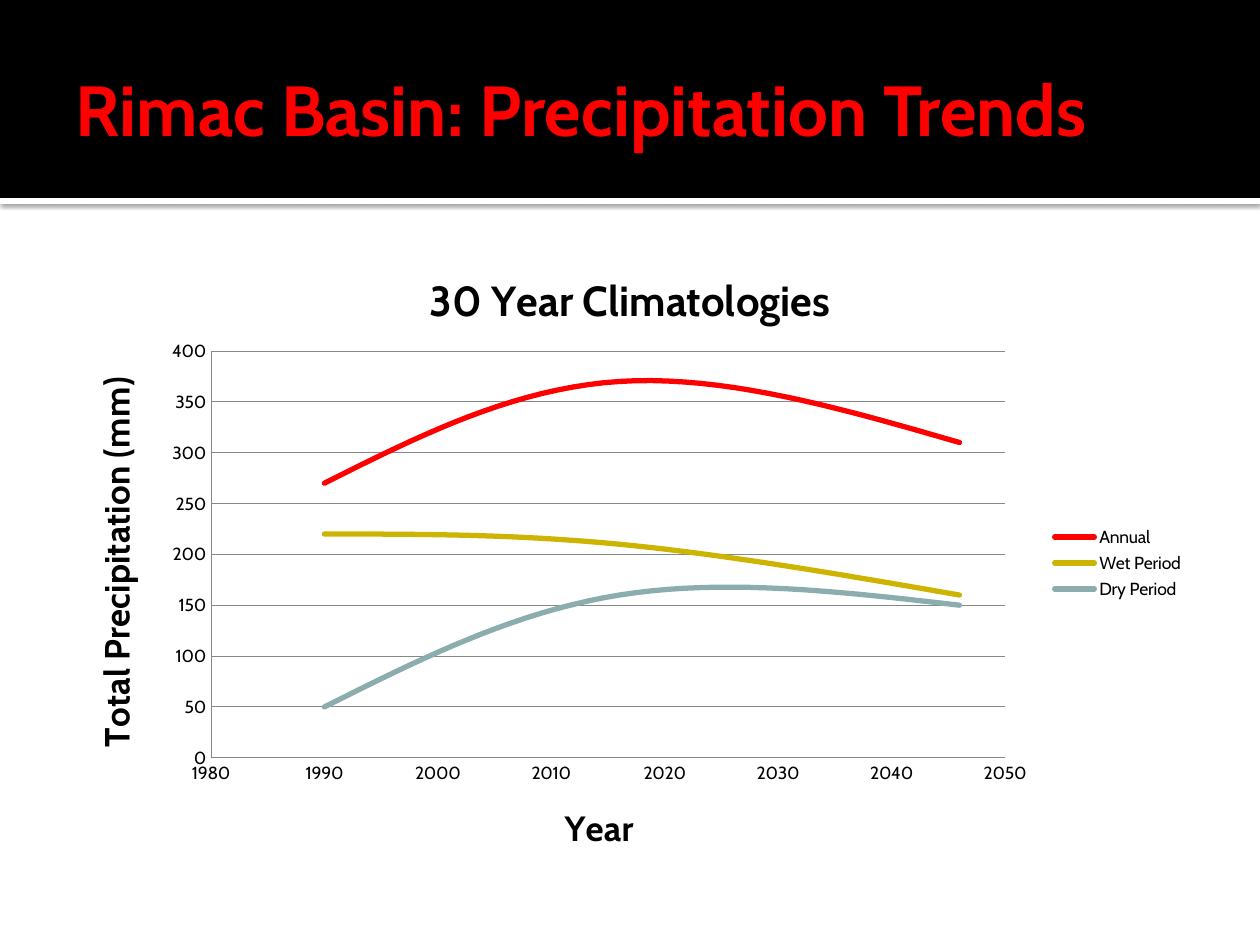
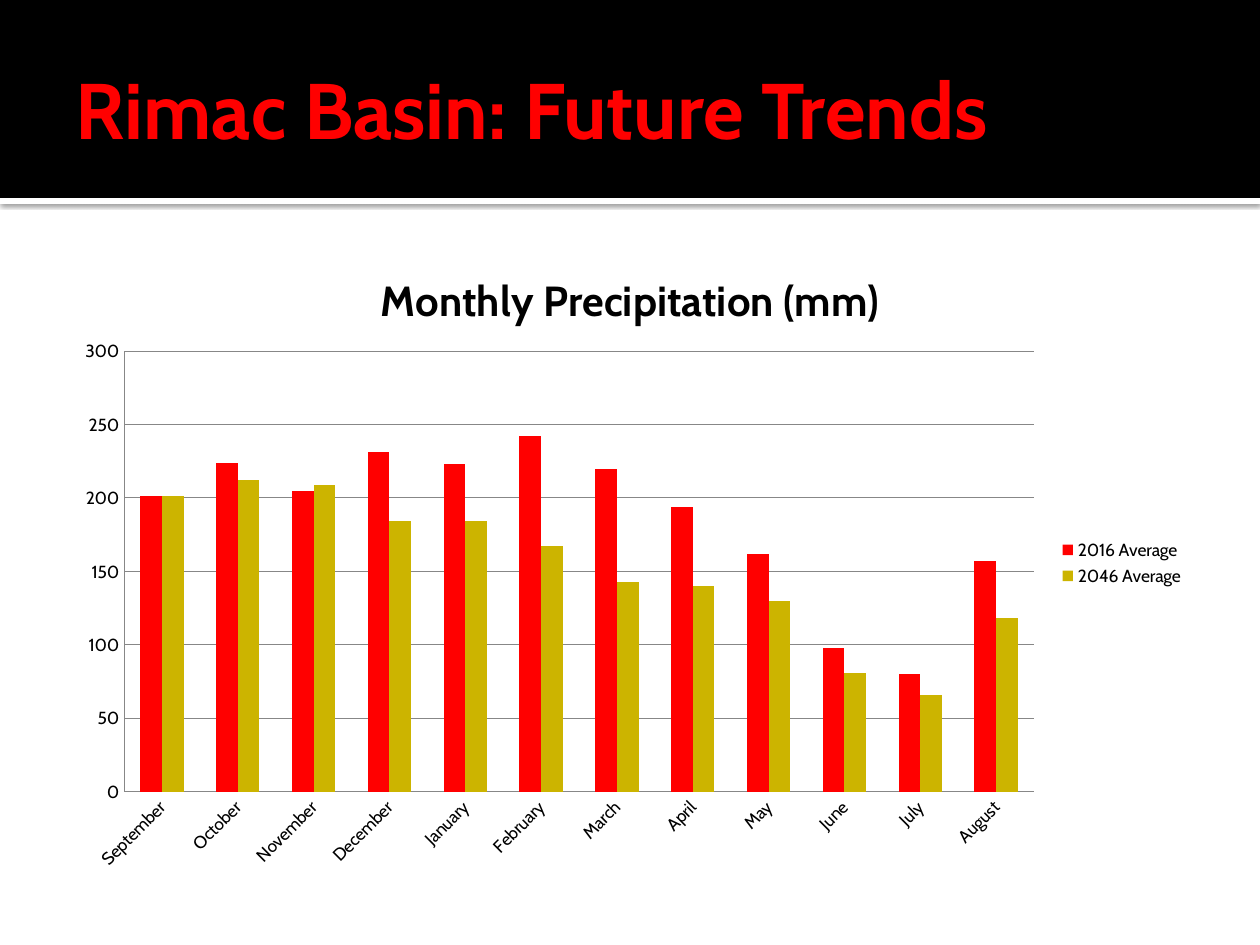
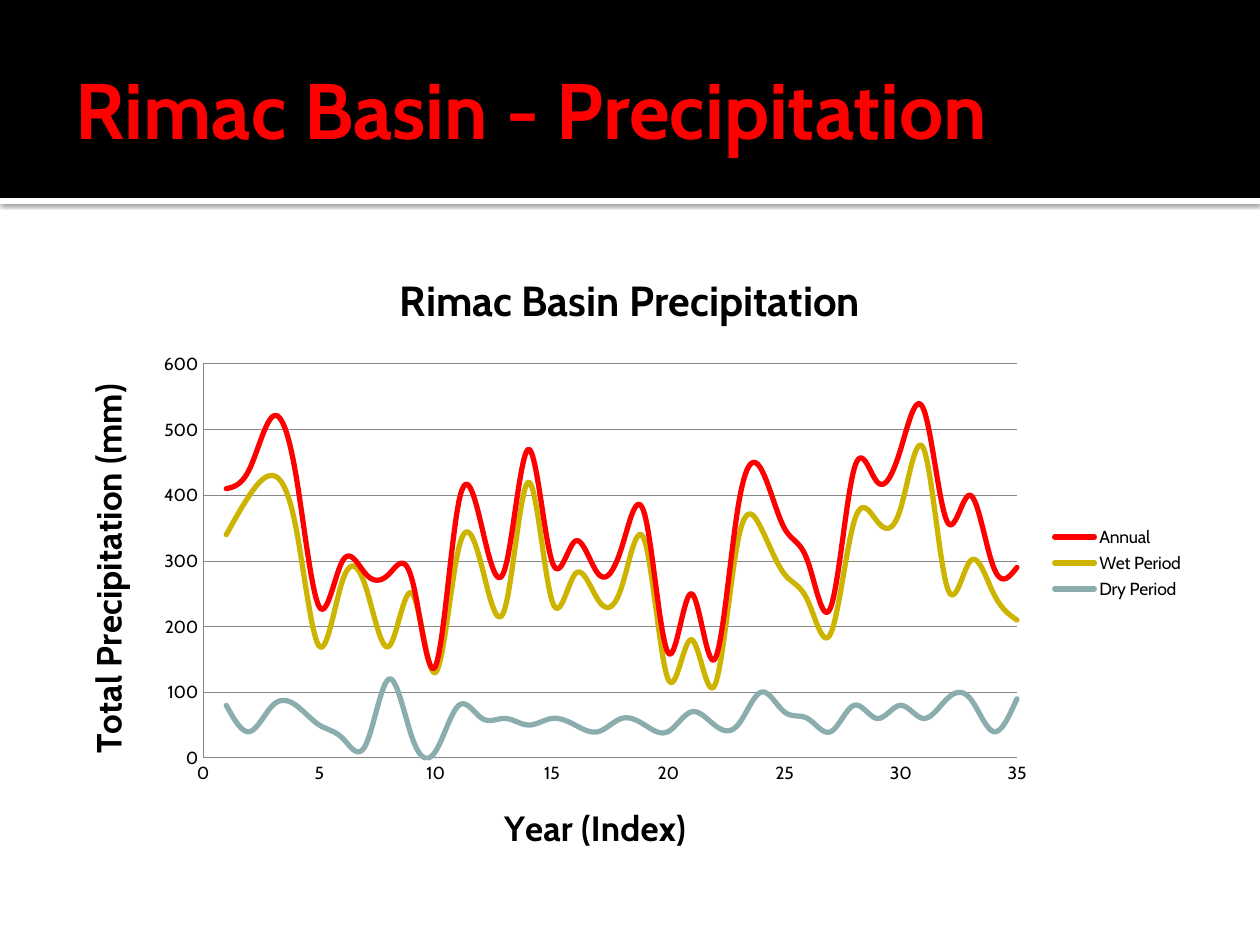
import pptx
import pptx.util
import pptx.chart.data
import pptx.dml.color
import pptx.enum.chart
import pptx.enum.shapes
import pptx.enum.text
import pptx.oxml.ns
from lxml import etree

PX = 914400 / 126
FONT = "Cabin"
HUES = {"red": "FF0000", "gold": "CCB400", "teal": "8CADAE",
        "black": "000000", "white": "FFFFFF", "grid": "878787"}
TINTS = ["red", "gold", "teal"]
NAMES = ["Annual", "Wet Period", "Dry Period"]
RAIN = "Total Precipitation (mm)"
AREA = (63, 244, 1134, 638)

SLIDES = [
    {"title": "Rimac Basin: Precipitation Trends", "size": 40.5,
     "head": "30 Year Climatologies", "across": "Year", "up": RAIN,
     "plot": (211, 351, 794, 407),
     "span": (1980, 2050, 10), "top": (400, 50), "keys": [1990, 2016, 2046],
     "rows": dict(zip(NAMES, [[270, 370, 310], [220, 210, 160], [50, 160, 150]]))},
    {"title": "Rimac Basin: Future Trends", "size": 45,
     "head": "Monthly Precipitation (mm)", "across": None, "up": None,
     "plot": (124, 351, 910, 441),
     "span": None, "top": (300, 50),
     "keys": ["September", "October", "November", "December", "January", "February",
              "March", "April", "May", "June", "July", "August"],
     "rows": {
         "2016 Average": [201, 224, 205, 231, 223, 242, 220, 194, 162, 98, 80, 157],
         "2046 Average": [201, 212, 209, 184, 184, 167, 143, 140, 130, 81, 66, 118]}},
    {"title": "Rimac Basin - Precipitation", "size": 45,
     "head": "Rimac Basin Precipitation", "across": "Year (Index)", "up": RAIN,
     "plot": (203, 364, 814, 394),
     "span": (0, 35, 5), "top": (600, 100), "keys": range(1, 36),
     "rows": dict(zip(NAMES, [
         [410, 440, 520, 430, 230, 300, 280, 280, 270, 140, 390, 350,
          290, 470, 300, 330, 280, 320, 370, 160, 250, 150, 380, 440,
          350, 300, 230, 440, 420, 470, 530, 360, 400, 290, 290],
         [340, 400, 430, 350, 170, 270, 260, 170, 250, 130, 320, 290,
          230, 420, 240, 280, 240, 260, 330, 120, 180, 110, 330, 350,
          280, 240, 190, 360, 360, 380, 470, 260, 300, 250, 210],
         [80, 40, 80, 80, 50, 30, 20, 120, 30, 10, 80, 60,
          60, 50, 60, 50, 40, 60, 50, 40, 70, 50, 50, 100,
          70, 60, 40, 80, 60, 80, 60, 90, 90, 40, 90]]))},
]


def write(frame, text, size, hue="black"):
    run = frame.paragraphs[0].add_run()
    run.text = text
    run.font.name = FONT
    run.font.size = pptx.util.Pt(size)
    run.font.bold = True
    run.font.color.rgb = pptx.dml.color.RGBColor.from_string(HUES[hue])


def place(left, top, width, height):
    return [round(side * PX) for side in (left, top, width, height)]


rgb = pptx.dml.color.RGBColor.from_string
qn = pptx.oxml.ns.qn
kinds = pptx.enum.chart.XL_CHART_TYPE
deck = pptx.Presentation()
deck.slide_width = round(1260 * PX)
deck.slide_height = round(945 * PX)

for page in SLIDES:
    slide = deck.slides.add_slide(deck.slide_layouts[6])

    for hue, top, height in [("white", 198, 6), ("black", 0, 198)]:
        band = slide.shapes.add_shape(
            pptx.enum.shapes.MSO_SHAPE.RECTANGLE, *place(0, top, 1260, height))
        band.fill.solid()
        band.fill.fore_color.rgb = rgb(HUES[hue])
        band.line.fill.background()
        band.shadow.inherit = False
        if hue == "white":
            glow = etree.SubElement(
                band.element.spPr.find(qn("a:effectLst")), qn("a:outerShdw"),
                blurRad="31750", dist="10160", dir="5400000", algn="tl", rotWithShape="0")
            shade = etree.SubElement(glow, qn("a:srgbClr"), val=HUES["black"])
            etree.SubElement(shade, qn("a:alpha"), val="60000")

    title = slide.shapes.add_textbox(*place(63, 22, 1134, 173)).text_frame
    title.word_wrap = True
    title.vertical_anchor = pptx.enum.text.MSO_ANCHOR.MIDDLE
    title.margin_left = round(13 * PX)
    title.margin_top = title.margin_right = title.margin_bottom = round(6 * PX)
    write(title, page["title"], size=page["size"], hue="red")

    if page["span"]:
        kind = kinds.XY_SCATTER_SMOOTH_NO_MARKERS
        data = pptx.chart.data.XyChartData()
        for name, vals in page["rows"].items():
            row = data.add_series(name)
            for key, val in zip(page["keys"], vals):
                row.add_data_point(key, val)
    else:
        kind = kinds.COLUMN_CLUSTERED
        data = pptx.chart.data.CategoryChartData(number_format="0")
        data.categories = page["keys"]
        for name, vals in page["rows"].items():
            data.add_series(name, vals)

    chart = slide.shapes.add_chart(kind, *place(*AREA), data).chart
    chart.font.name = FONT
    chart.font.size = pptx.util.Pt(10)
    chart.font.color.rgb = rgb(HUES["black"])
    chart.has_title = True
    write(chart.chart_title.text_frame, page["head"], size=24)
    chart.has_legend = True
    chart.legend.position = pptx.enum.chart.XL_LEGEND_POSITION.RIGHT
    chart.legend.include_in_layout = False

    plot = chart.plots[0]
    plot.vary_by_categories = False
    if not page["span"]:
        plot.gap_width = 150
        plot.overlap = 0
    for row, tint in zip(plot.series, TINTS):
        if page["span"]:
            row.format.line.width = pptx.util.Pt(3)
            row.format.line.color.rgb = rgb(HUES[tint])
        else:
            row.format.fill.solid()
            row.format.fill.fore_color.rgb = rgb(HUES[tint])
    for curve in chart.element.xpath(".//c:ser/c:smooth"):
        curve.set("val", "1")
    for line in chart.element.xpath(".//c:ser/c:spPr/a:ln"):
        line.set("cap", "rnd")

    field = chart.element.xpath(".//c:plotArea")[0]
    for old in field.findall(qn("c:layout")):
        field.remove(old)
    layout = etree.Element(qn("c:layout"))
    field.insert(0, layout)
    inner = etree.SubElement(layout, qn("c:manualLayout"))
    etree.SubElement(inner, qn("c:layoutTarget"), val="inner")
    for side in "xy":
        etree.SubElement(inner, qn(f"c:{side}Mode"), val="edge")
    left, top, width, height = page["plot"]
    parts = {"x": (left - AREA[0]) / AREA[2], "y": (top - AREA[1]) / AREA[3],
             "w": width / AREA[2], "h": height / AREA[3]}
    for side, part in parts.items():
        etree.SubElement(inner, qn(f"c:{side}"), val=f"{part:.4f}")

    flat, tall = chart.category_axis, chart.value_axis
    flat.has_major_gridlines = False
    tall.has_major_gridlines = True
    lines = [flat.format.line, tall.format.line, tall.major_gridlines.format.line]
    for line in lines:
        line.width = pptx.util.Pt(0.5)
        line.color.rgb = rgb(HUES["grid"])
    for axis, label, turn in [(flat, page["across"], "0"), (tall, page["up"], "-5400000")]:
        axis.major_tick_mark = pptx.enum.chart.XL_TICK_MARK.NONE
        axis.minor_tick_mark = pptx.enum.chart.XL_TICK_MARK.NONE
        axis.has_title = bool(label)
        if label:
            write(axis.axis_title.text_frame, label, size=20)
            axis.axis_title.element.xpath(".//a:bodyPr")[0].set("rot", turn)
    tall.minimum_scale = 0
    tall.maximum_scale, tall.major_unit = page["top"]
    if page["span"]:
        flat.minimum_scale, flat.maximum_scale, flat.major_unit = page["span"]

deck.save("out.pptx")
